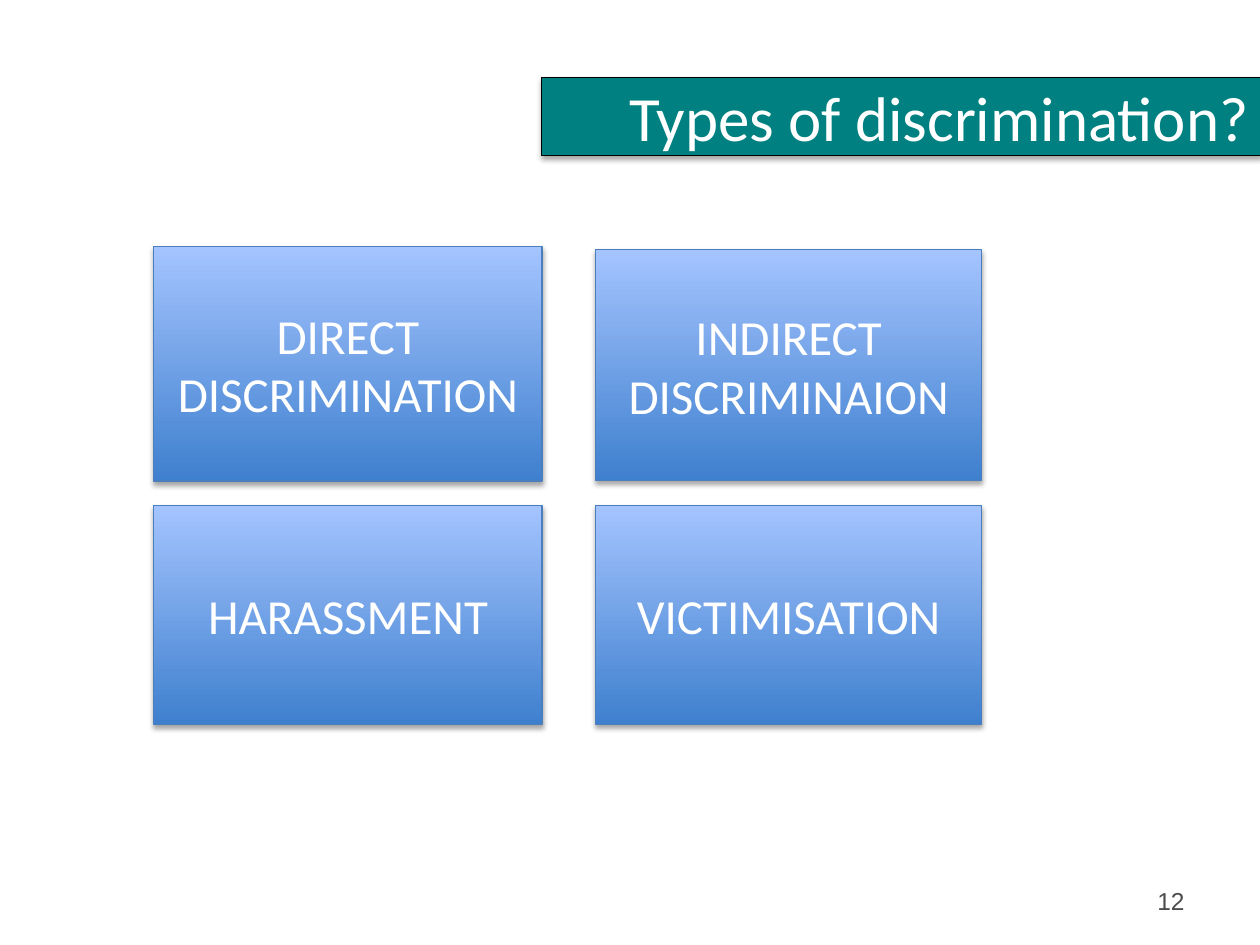
from dataclasses import dataclass

from lxml.etree import SubElement
from pptx import Presentation
from pptx.dml.color import RGBColor
from pptx.enum.shapes import MSO_SHAPE as Preset
from pptx.enum.text import MSO_ANCHOR as Anchor, PP_ALIGN as Align
from pptx.oxml.ns import qn
from pptx.shapes.autoshape import Shape
from pptx.slide import Slide
from pptx.util import Pt

WHITE = "FFFFFF"


@dataclass
class Box:
    text: str
    left: float
    top: float
    width: float
    height: float


def color(hex_code: str) -> RGBColor:
    return RGBColor.from_string(hex_code)


def write(shape: Shape, text: str, size: float, align: Align,
          font: str = "Calibri", ink: str = WHITE) -> None:
    frame = shape.text_frame
    frame.word_wrap = True
    frame.vertical_anchor = Anchor.MIDDLE
    frame.text = text
    for paragraph in frame.paragraphs:
        paragraph.alignment = align
        paragraph.font.name = font
        paragraph.font.size = Pt(size)
        paragraph.font.color.rgb = color(ink)


def add_shadow(shape: Shape) -> None:
    """Soft shadow straight below the shape."""
    shape.shadow.inherit = False
    effects = shape._element.spPr.find(qn("a:effectLst"))
    shadow = SubElement(effects, qn("a:outerShdw"), blurRad=str(Pt(3.1)),
                        dist=str(Pt(1.8)), dir="5400000", rotWithShape="0")
    black = SubElement(shadow, qn("a:srgbClr"), val="000000")
    SubElement(black, qn("a:alpha"), val="35000")


def add_panel(slide: Slide, box: Box, outline: str) -> Shape:
    panel = slide.shapes.add_shape(Preset.RECTANGLE, Pt(box.left), Pt(box.top),
                                   Pt(box.width), Pt(box.height))
    panel.line.color.rgb = color(outline)
    panel.line.width = Pt(0.75)
    add_shadow(panel)
    return panel


def add_banner(slide: Slide, box: Box) -> None:
    banner = add_panel(slide, box, "000000")
    banner.fill.solid()
    banner.fill.fore_color.rgb = color("008080")
    write(banner, box.text, 36, Align.RIGHT)


def add_tile(slide: Slide, box: Box) -> None:
    tile = add_panel(slide, box, "4B7EBC")
    tile.fill.gradient()
    tile.fill.gradient_angle = 90
    for stop, shade in zip(tile.fill.gradient_stops, ("3F80CE", "A4C4FF")):
        stop.color.rgb = color(shade)
    write(tile, box.text, 28, Align.CENTER)


def add_page_number(slide: Slide, box: Box) -> None:
    number = slide.shapes.add_textbox(Pt(box.left), Pt(box.top),
                                      Pt(box.width), Pt(box.height))
    write(number, box.text, 14, Align.RIGHT, "Arial", "4C4C4C")


def main() -> None:
    deck = Presentation()
    deck.slide_width, deck.slide_height = Pt(720), Pt(540)
    slide = deck.slides.add_slide(deck.slide_layouts[6])

    # Page number and title banner
    add_page_number(slide, Box("12", 516.24, 500.4, 167.76, 28.8))
    add_banner(slide, Box("Types of discrimination?", 309.6, 44.4, 411.1, 44.6))

    # Four types in two columns
    left_column, left_width = 87.9, 221.8
    right_column, right_width = 340.4, 220.5
    lower_row, lower_height = 288.7, 125.5
    types = (
        Box("DIRECT\nDISCRIMINATION", left_column, 140.9, left_width, 134),
        Box("INDIRECT DISCRIMINAION", right_column, 142.6, right_width, 132),
        Box("HARASSMENT", left_column, lower_row, left_width, lower_height),
        Box("VICTIMISATION", right_column, lower_row, right_width, lower_height),
    )
    for kind in types:
        add_tile(slide, kind)

    deck.save("out.pptx")


if __name__ == "__main__":
    main()
